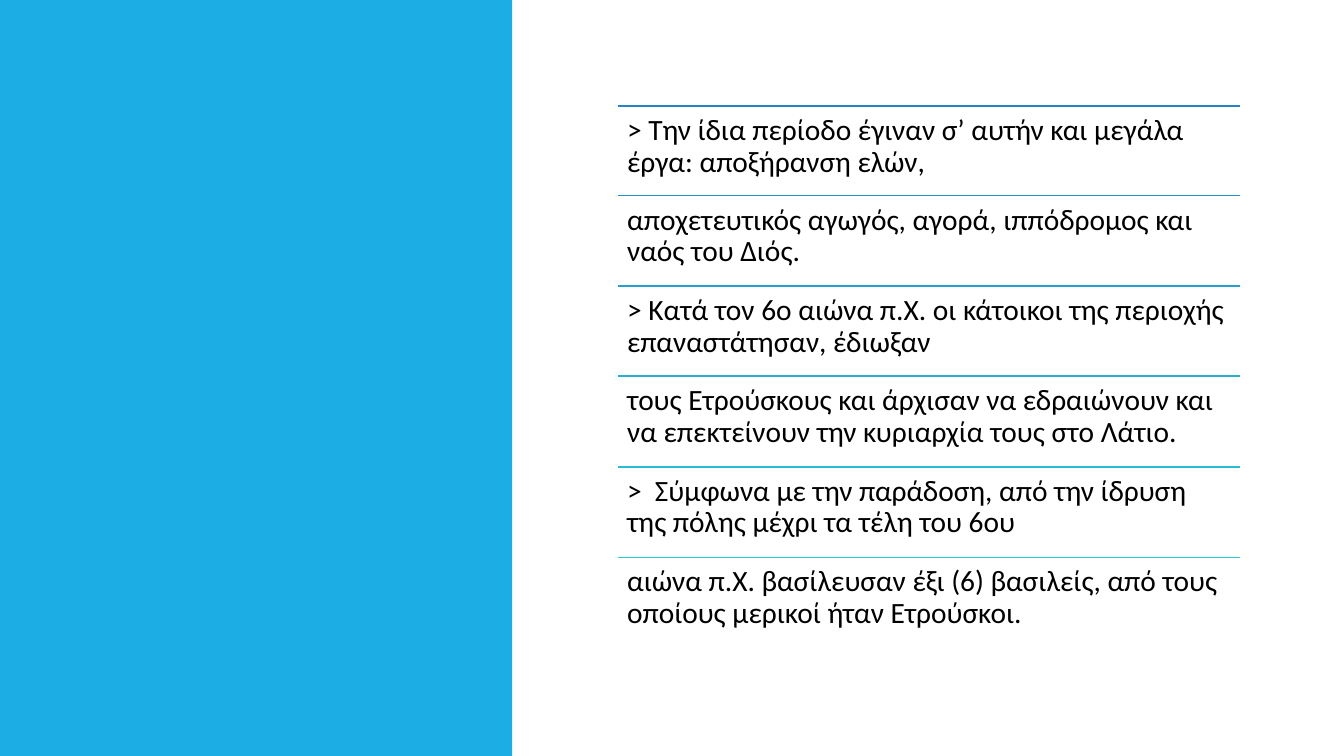
from lxml import etree
from pptx import Presentation
from pptx.dml.color import RGBColor
from pptx.enum.shapes import MSO_CONNECTOR, MSO_SHAPE
from pptx.enum.text import MSO_ANCHOR, PP_ALIGN
from pptx.oxml.ns import qn
from pptx.util import Pt

STRAIGHT = MSO_CONNECTOR.STRAIGHT
RECTANGLE = MSO_SHAPE.RECTANGLE
TOP = MSO_ANCHOR.TOP
LEFT = PP_ALIGN.LEFT

EMU_PER_PX = 9144
SLIDE_WIDTH, SLIDE_HEIGHT = 1333, 750
PANEL_WIDTH = 508
LIST_LEFT, LIST_TOP, LIST_WIDTH = 613, 105, 617
LAST_ROW_OFFSET, ROW_HEIGHT = 448, 90

PANEL_BLUE = RGBColor(0x1C, 0xAD, 0xE4)
BLACK = RGBColor(0x00, 0x00, 0x00)

ROWS = [
    (RGBColor(0x26, 0x83, 0xC6), "> Την ίδια περίοδο έγιναν σ’ αυτήν και μεγάλα έργα: αποξήρανση ελών,"),
    (RGBColor(0x26, 0x91, 0xC9), "αποχετευτικός αγωγός, αγορά, ιππόδρομος και ναός του Διός."),
    (RGBColor(0x26, 0xA0, 0xCD), "> Κατά τον 6ο αιώνα π.Χ. οι κάτοικοι της περιοχής επαναστάτησαν, έδιωξαν"),
    (RGBColor(0x27, 0xAF, 0xD0), "τους Ετρούσκους και άρχισαν να εδραιώνουν και να επεκτείνουν την κυριαρχία τους στο Λάτιο."),
    (RGBColor(0x27, 0xBE, 0xD4), ">  Σύμφωνα με την παράδοση, από την ίδρυση της πόλης μέχρι τα τέλη του 6ου"),
    (RGBColor(0x27, 0xCE, 0xD7), "αιώνα π.Χ. βασίλευσαν έξι (6) βασιλείς, από τους οποίους μερικοί ήταν Ετρούσκοι."),
]


def px(*lengths):
    """Turn pixel lengths into EMU."""
    return [length * EMU_PER_PX for length in lengths]


class SlideBuilder:
    """Draw styled elements on the current slide."""

    font_name = "Calibri"
    font_size = Pt(21)
    line_width = Pt(1.25)
    inset = 9

    def __init__(self, slide):
        """Keep the slide to draw on."""
        self.slide = slide

    def panel(self, left, top, width, height, color):
        """Add a plain filled rectangle."""
        shape = self.slide.shapes.add_shape(RECTANGLE, *px(left, top, width, height))
        shape.shadow.inherit = False
        shape.fill.solid()
        shape.fill.fore_color.rgb = color
        shape.line.fill.background()

    def rule(self, left, top, width, color):
        """Add a horizontal line."""
        connector = self.slide.shapes.add_connector(STRAIGHT, *px(left, top, left + width, top))
        connector.line.color.rgb = color
        connector.line.width = self.line_width
        etree.SubElement(connector._element.spPr, qn("a:effectLst"))

    def text(self, left, top, width, height, wording):
        """Add a wrapped, top-anchored paragraph."""
        shape = self.slide.shapes.add_textbox(*px(left, top, width, height))
        frame = shape.text_frame
        frame.word_wrap = True
        frame.vertical_anchor = TOP
        [inset] = px(self.inset)
        frame.margin_left = frame.margin_right = inset
        frame.margin_top = frame.margin_bottom = inset
        paragraph = frame.paragraphs[0]
        paragraph.text = wording
        paragraph.alignment = LEFT
        paragraph.line_spacing = 0.9
        paragraph.font.name = self.font_name
        paragraph.font.size = self.font_size
        paragraph.font.color.rgb = BLACK


def main():
    """Build the slide and save it."""
    presentation = Presentation()
    presentation.slide_width, presentation.slide_height = px(SLIDE_WIDTH, SLIDE_HEIGHT)
    builder = SlideBuilder(presentation.slides.add_slide(presentation.slide_layouts[6]))
    builder.panel(0, 0, PANEL_WIDTH, SLIDE_HEIGHT, PANEL_BLUE)
    for index, (color, wording) in enumerate(ROWS):
        top = LIST_TOP + index * LAST_ROW_OFFSET // (len(ROWS) - 1)
        builder.rule(LIST_LEFT, top, LIST_WIDTH, color)
        builder.text(LIST_LEFT, top, LIST_WIDTH, ROW_HEIGHT, wording)
    presentation.save("out.pptx")


if __name__ == "__main__":
    main()
